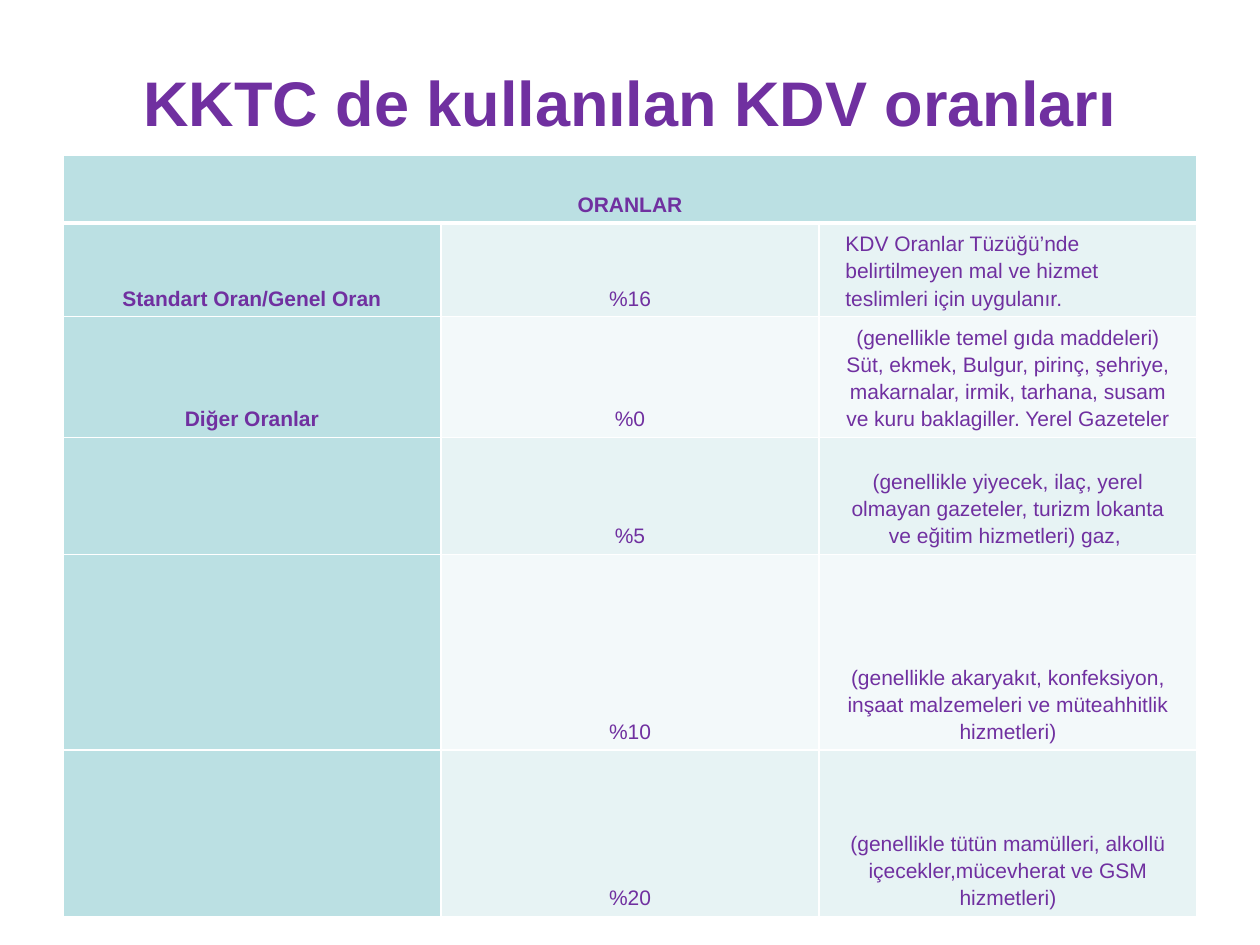
from lxml.etree import SubElement
from pptx import Presentation
from pptx.dml.color import RGBColor
from pptx.enum.text import MSO_ANCHOR, PP_ALIGN
from pptx.oxml.ns import qn
from pptx.util import Inches, Pt

PURPLE = RGBColor(0x70, 0x30, 0xA0)
TEAL = RGBColor(0xBB, 0xE0, 0xE3)
BAND_DARK = RGBColor(0xE7, 0xF3, 0xF4)
BAND_LIGHT = RGBColor(0xF3, 0xF9, 0xFA)
WHITE = RGBColor(0xFF, 0xFF, 0xFF)

ROW_HEIGHTS = [0.54, 0.54, 0.54, 0.93, 1.55, 1.32]
ROWS = [
    ("ORANLAR", "", ""),
    ("Standart Oran/Genel Oran", "%16",
     "KDV Oranlar Tüzüğü’nde belirtilmeyen mal ve hizmet teslimleri için uygulanır."),
    ("Diğer Oranlar", "%0",
     "(genellikle temel gıda maddeleri) Süt, ekmek, Bulgur, pirinç, şehriye, makarnalar, "
     "irmik, tarhana, susam ve kuru baklagiller. Yerel Gazeteler"),
    ("", "%5",
     "(genellikle yiyecek, ilaç, yerel olmayan gazeteler, turizm lokanta "
     "ve eğitim hizmetleri) gaz, "),
    ("", "%10",
     "(genellikle akaryakıt, konfeksiyon, inşaat malzemeleri ve müteahhitlik hizmetleri)"),
    ("", "%20",
     "(genellikle tütün mamülleri, alkollü içecekler,mücevherat ve GSM hizmetleri)"),
]


def style_paragraph(para, size, bold, align=PP_ALIGN.CENTER):
    para.alignment = align
    para.font.name = "Arial"
    para.font.size = Pt(size)
    para.font.bold = bold
    para.font.color.rgb = PURPLE


def add_borders(cell, widths):
    properties = cell._tc.get_or_add_tcPr()
    for position, (side, width) in enumerate(widths.items()):
        line = SubElement(properties, qn(f"a:{side}"), w=str(Pt(width)))
        fill = SubElement(line, qn("a:solidFill"))
        SubElement(fill, qn("a:srgbClr"), val=str(WHITE))
        properties.insert(position, line)


deck = Presentation()
deck.slide_width = Inches(10)
deck.slide_height = Inches(7.5)
page = deck.slides.add_slide(deck.slide_layouts[5])

title = page.shapes.title
title.left, title.top = Inches(0.5), Inches(0.3)
title.width, title.height = Inches(9), Inches(1.01)
title.text_frame.text = "KKTC de kullanılan KDV oranları"
title.text_frame.vertical_anchor = MSO_ANCHOR.MIDDLE
style_paragraph(title.text_frame.paragraphs[0], 36, True)

frame = page.shapes.add_table(len(ROWS), 3, Inches(0.5), Inches(1.23),
                              Inches(9), Inches(sum(ROW_HEIGHTS)))
table = frame.table
table.first_row = False
table.horz_banding = False
for column in table.columns:
    column.width = Inches(3)

for row, texts in enumerate(ROWS):
    table.rows[row].height = Inches(ROW_HEIGHTS[row])
    for column, text in enumerate(texts):
        cell = table.cell(row, column)
        is_heading = row == 0 or column == 0
        cell.fill.solid()
        if is_heading:
            cell.fill.fore_color.rgb = TEAL
        else:
            cell.fill.fore_color.rgb = BAND_DARK if row % 2 else BAND_LIGHT
        add_borders(cell, {"lnL": 1, "lnR": 1,
                           "lnT": 3 if row == 1 else 1,
                           "lnB": 3 if row == 0 else 1})
        if not text:
            continue
        cell.text = text
        cell.vertical_anchor = MSO_ANCHOR.BOTTOM
        cell.margin_left = cell.margin_right = Inches(0.21)
        cell.margin_top = cell.margin_bottom = Inches(0.05)
        para = cell.text_frame.paragraphs[0]
        para.line_spacing = 1.15
        left_aligned = (row, column) == (1, 2)
        style_paragraph(para, 12, is_heading,
                        PP_ALIGN.LEFT if left_aligned else PP_ALIGN.CENTER)

table.cell(0, 0).merge(table.cell(0, 2))

deck.save("out.pptx")
